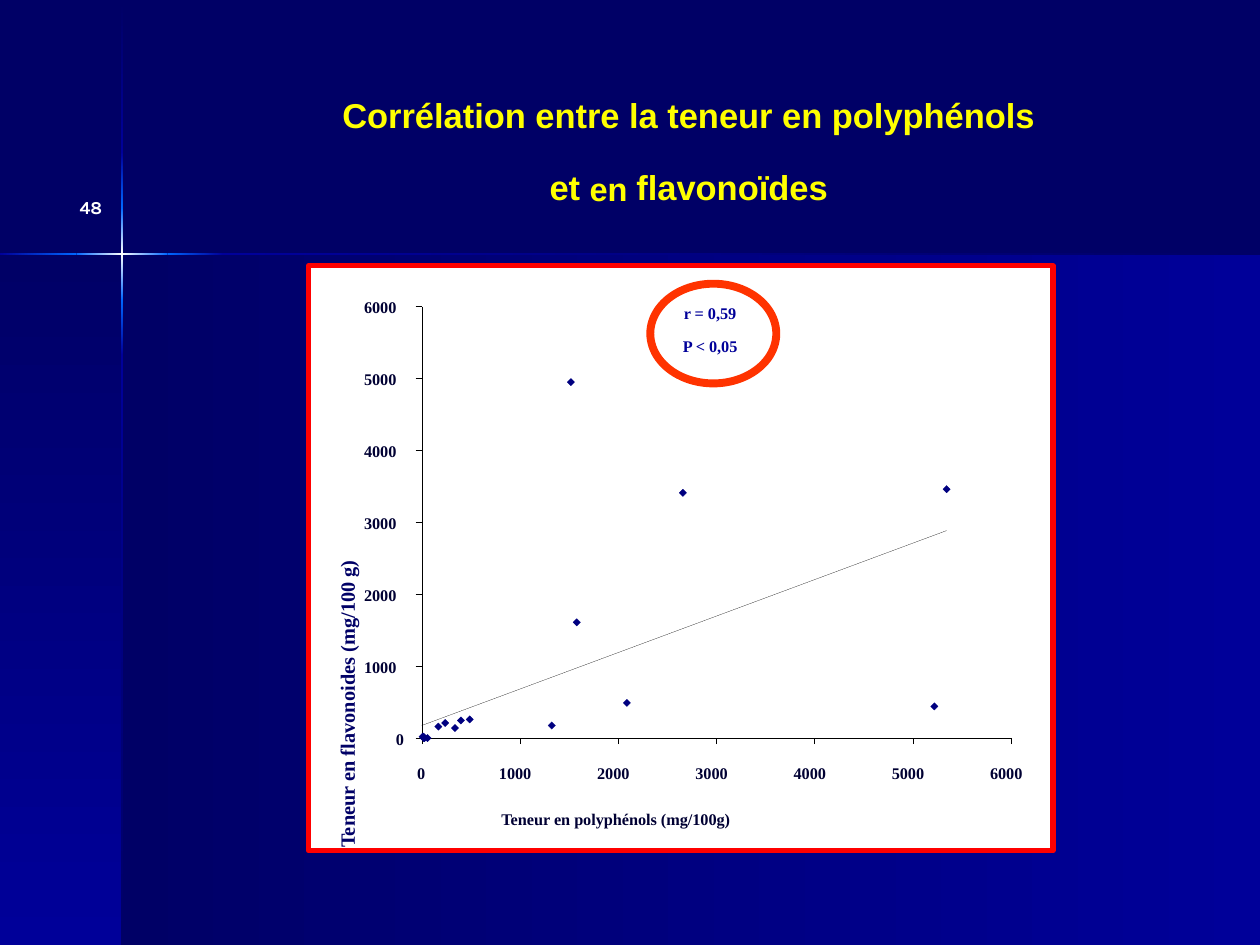
from copy import deepcopy
from dataclasses import dataclass

from lxml import etree
from pptx import Presentation
from pptx import util as u
from pptx.dml.color import RGBColor
from pptx.enum import shapes, text
from pptx.oxml.ns import qn

NIGHT = RGBColor(0x00, 0x00, 0x66)
NAVY = RGBColor(0x00, 0x00, 0x99)
BRIGHT = RGBColor(0x00, 0x66, 0xFF)
MARKER = RGBColor(0x00, 0x00, 0x80)
INK = RGBColor(0x00, 0x00, 0x33)
BLACK = RGBColor(0x00, 0x00, 0x00)
WHITE = RGBColor(0xFF, 0xFF, 0xFF)
YELLOW = RGBColor(0xFF, 0xFF, 0x00)
RED = RGBColor(0xFF, 0x00, 0x00)
ORANGE = RGBColor(0xFF, 0x33, 0x00)

SERIF = "Times New Roman"
RECT = shapes.MSO_SHAPE.RECTANGLE
LEFT, CENTER, RIGHT = text.PP_ALIGN.LEFT, text.PP_ALIGN.CENTER, text.PP_ALIGN.RIGHT
DOWN, ACROSS = 270, 0
HAIRLINE = 0.1

# Plot scale: lengths in centimetres, values in thousands of mg/100 g
ORIGIN_X, ORIGIN_Y = 8.5, 14.88
STEP_X, STEP_Y = 1.98, 1.45
TICK = 0.12
MARK = 0.15


@dataclass
class Area:
    left: float
    top: float
    width: float
    height: float

    def lengths(self) -> list:
        return [u.Cm(v) for v in (self.left, self.top, self.width, self.height)]


@dataclass
class Band:
    area: Area
    colors: tuple
    angle: int


@dataclass
class Style:
    size: float
    color: RGBColor
    font: str = SERIF
    align: int = LEFT


# Lit cross and panels of the background
ROWS = [0.03, 3.07, 4.19, 6.05, 7.16, 19.05]
COLUMNS = [0, 1.54, 3.38, 4.5, 25.4]
GLOW = [(NAVY, BRIGHT), (BRIGHT, WHITE, BRIGHT), (BRIGHT, NAVY), (NAVY, NIGHT)]
BANDS = [
    Band(Area(2.46, 5.13, 22.94, 13.92), (NIGHT, NAVY), ACROSS),
    Band(Area(0, 5.13, 2.46, 13.92), (NIGHT, NAVY), DOWN),
]
BANDS += [Band(Area(2.44, a, 0.05, b - a), colors, DOWN)
          for a, b, colors in zip(ROWS, ROWS[1:], [(NIGHT, NAVY)] + GLOW)]
BANDS += [Band(Area(a, 5.1, b - a, 0.05), colors, ACROSS)
          for a, b, colors in zip(COLUMNS, COLUMNS[1:], GLOW)]

# Polyphenols, flavonoids (mg/100 g)
POINTS = [
    (60, 0), (170, 160), (490, 260), (240, 210), (1580, 1610), (5220, 440),
    (2090, 490), (10, 20), (20, 20), (400, 245), (1325, 175), (340, 140),
    (30, 0), (20, 0), (2660, 3410), (5345, 3460), (1520, 4950),
]
TREND = [(0, 175), (5345, 2885)]


def place(x: float, y: float) -> tuple:
    return ORIGIN_X + x / 1000 * STEP_X, ORIGIN_Y - y / 1000 * STEP_Y


def add_shape(page, kind, area: Area, fill=None, line=None,
              weight: float = HAIRLINE):
    shape = page.shapes.add_shape(kind, *area.lengths())
    shape.shadow.inherit = False
    if fill is None:
        shape.fill.background()
    else:
        shape.fill.solid()
        shape.fill.fore_color.rgb = fill
    if line is None:
        shape.line.fill.background()
    else:
        shape.line.color.rgb = line
        shape.line.width = u.Pt(weight)
    return shape


def add_band(page, band: Band) -> None:
    shape = add_shape(page, RECT, band.area)
    shape.fill.gradient()
    shape.fill.gradient_angle = band.angle
    stops = shape._element.spPr.find(qn("a:gradFill")).find(qn("a:gsLst"))
    for _ in band.colors[2:]:
        stops.append(deepcopy(stops[0]))
    for i, (stop, color) in enumerate(zip(stops, band.colors)):
        stop.set("pos", str(100000 * i // (len(band.colors) - 1)))
        shape.fill.gradient_stops[i].color.rgb = color


def add_line(page, start: tuple, end: tuple) -> None:
    line = page.shapes.add_connector(
        shapes.MSO_CONNECTOR.STRAIGHT, *[u.Cm(v) for v in (*start, *end)])
    line.line.color.rgb = BLACK
    line.line.width = u.Pt(HAIRLINE)
    etree.SubElement(line._element.spPr, qn("a:effectLst"))


def write(box, lines: list, style: Style) -> None:
    """Fill a box with raised bold text, one paragraph per list of runs."""
    frame = box.text_frame
    frame.word_wrap = True
    frame.vertical_anchor = text.MSO_ANCHOR.TOP
    for i, runs in enumerate(lines):
        para = frame.add_paragraph() if i else frame.paragraphs[0]
        para.alignment = style.align
        para.font.name = style.font
        para.font.size = u.Pt(style.size)
        para.font.bold = True
        para.font.color.rgb = style.color
        for words in runs:
            span = para.add_run()
            span.text = words
            span._r.get_or_add_rPr().set("baseline", "30000")


def add_text(page, area: Area, lines: list, style: Style, tight: bool = True):
    box = page.shapes.add_textbox(*area.lengths())
    write(box, lines, style)
    if tight:
        frame = box.text_frame
        frame.margin_left = frame.margin_right = 0
        frame.margin_top = frame.margin_bottom = 0
    return box


def draw_plot(page) -> None:
    label = Style(16, INK)
    add_line(page, place(0, 6000), place(0, 0))
    add_line(page, place(0, 0), place(6000, 0))

    # Ticks and their numbers on both axes
    for value in range(0, 6001, 1000):
        x, y = place(value, value)
        add_line(page, (ORIGIN_X - TICK, y), (ORIGIN_X, y))
        add_line(page, (x, ORIGIN_Y + TICK), (x, ORIGIN_Y))
        width, left, shift = (1.14, 7.34, 0.42) if value else (0.28, 7.98, 0.09)
        for area in (Area(left, y - 0.25, width, 0.69),
                     Area(x - shift, 15.32, width, 0.69)):
            add_text(page, area, [[str(value)]], label)

    # Points and trend
    for point in POINTS:
        x, y = place(*point)
        area = Area(x - MARK / 2, y - MARK / 2, MARK, MARK)
        add_shape(page, shapes.MSO_SHAPE.DIAMOND, area, MARKER, MARKER)
    add_line(page, *[place(*end) for end in TREND])

    # Axis titles
    add_text(page, Area(10.11, 16.24, 8.2, 0.69),
             [["Teneur en polyphénols (mg/100g) "]], label)
    side = add_text(page, Area(6.22, 5.36, 1.73, 11.73),
                    [["Teneur en flavonoides (mg/100 g)"]], Style(20, NIGHT))
    side.text_frame.vertical_anchor = text.MSO_ANCHOR.MIDDLE
    side.text_frame._txBody.bodyPr.set("vert", "vert270")


def main() -> None:
    deck = Presentation()
    deck.slide_width, deck.slide_height = u.Cm(25.4), u.Cm(19.05)
    page = deck.slides.add_slide(deck.slide_layouts[6])
    page.background.fill.solid()
    page.background.fill.fore_color.rgb = NIGHT
    for band in BANDS:
        add_band(page, band)

    # Heading, with one smaller word
    heading = add_text(
        page, Area(2.92, 1.63, 22.12, 3.12),
        [["Corrélation entre la teneur en polyphénols "],
         ["et ", "en ", "flavonoïdes "]],
        Style(34, YELLOW, "Arial", CENTER), tight=False)
    heading.text_frame.paragraphs[1].runs[1].font.size = u.Pt(32)

    # Framed scatter plot
    add_shape(page, RECT, Area(6.22, 5.36, 15.01, 11.79), WHITE, RED, 3)
    draw_plot(page)

    # Circled statistics
    stats = add_shape(page, RECT, Area(12.09, 5.92, 4.45, 1.57), WHITE)
    write(stats, [["r = 0,59"], ["P < 0,05"]], Style(16, NAVY, align=CENTER))
    add_shape(page, shapes.MSO_SHAPE.OVAL, Area(13.11, 5.72, 2.54, 2.01),
              line=ORANGE, weight=4.5)

    # Page number
    add_text(page, Area(0, 3.76, 2.31, 1.27), [["48"]],
             Style(18, WHITE, "Karla", RIGHT), tight=False)
    deck.save("out.pptx")


if __name__ == "__main__":
    main()
